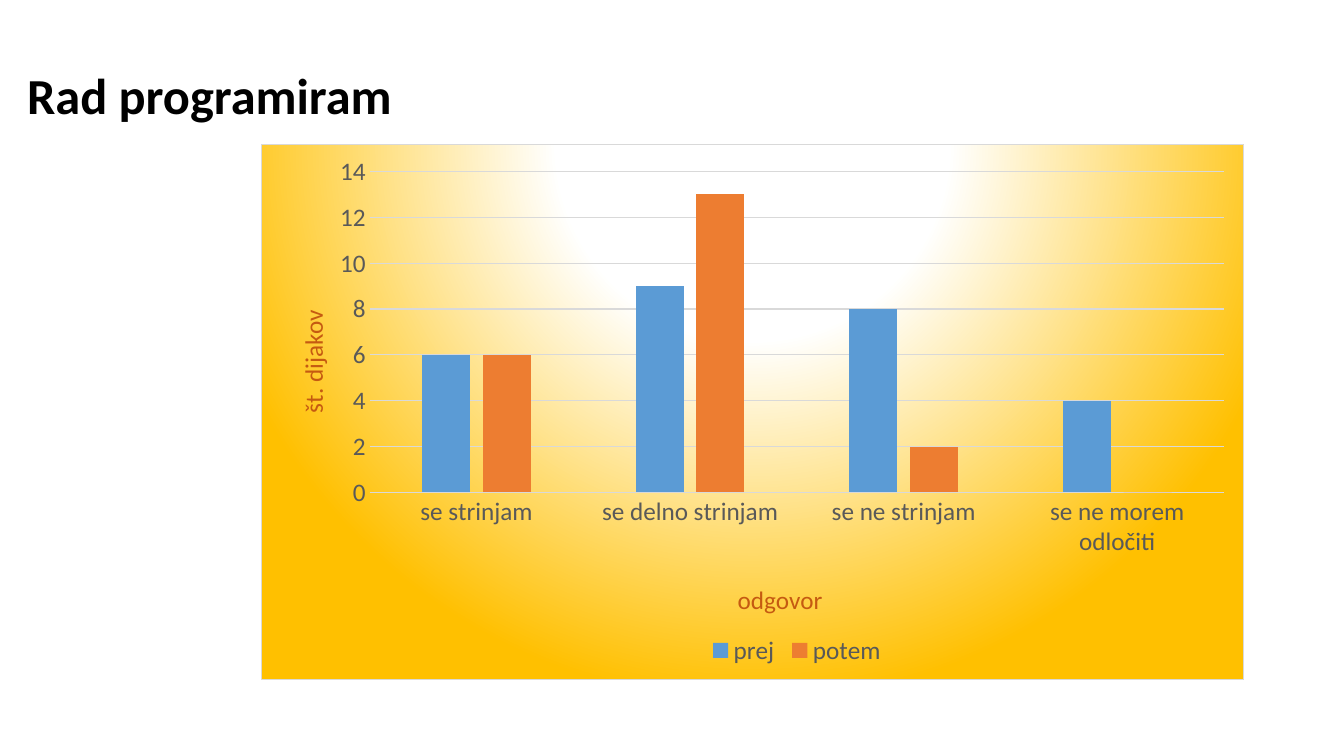
from lxml import etree
from pptx import Presentation
from pptx.chart.data import CategoryChartData
from pptx.dml.color import RGBColor
from pptx.enum import chart as kinds, text
from pptx.oxml import ns
from pptx.util import Inches, Pt

BLACK = RGBColor(0x00, 0x00, 0x00)
GREY = RGBColor(0x59, 0x59, 0x59)
PALE = RGBColor(0xD9, 0xD9, 0xD9)
RUST = RGBColor(0xC5, 0x5A, 0x11)
BLUE = RGBColor(0x5B, 0x9B, 0xD5)
ORANGE = RGBColor(0xED, 0x7D, 0x31)
FACE = "Calibri"

CATS = ["se strinjam", "se delno strinjam", "se ne strinjam", "se ne morem odločiti"]
SERIES = [("prej", [6, 9, 8, 4], BLUE), ("potem", [6, 13, 2, 0], ORANGE)]

GLOW = """<c:spPr xmlns:c="http://schemas.openxmlformats.org/drawingml/2006/chart"
 xmlns:a="http://schemas.openxmlformats.org/drawingml/2006/main">
<a:gradFill><a:gsLst>
<a:gs pos="0"><a:srgbClr val="FFFFFF"/></a:gs>
<a:gs pos="35000"><a:srgbClr val="FFFFFF"/></a:gs>
<a:gs pos="100000"><a:srgbClr val="FFC000"/></a:gs>
</a:gsLst><a:path path="circle">
<a:fillToRect l="50000" t="-80000" r="50000" b="180000"/></a:path></a:gradFill>
<a:ln w="9525"><a:solidFill><a:srgbClr val="D9D9D9"/></a:solidFill></a:ln>
</c:spPr>"""


def style(font, size, color, bold=False):
    """Set the face, size, weight and colour of a font."""
    for key, val in {"name": FACE, "size": Pt(size), "bold": bold}.items():
        setattr(font, key, val)
    font.color.rgb = color


def rule(line):
    """Draw a thin pale line."""
    line.color.rgb = PALE
    line.width = Pt(0.75)


def place(node, **spots):
    """Give a chart part a fixed place as shares of the chart."""
    for old in node.findall(ns.qn("c:layout")):
        node.remove(old)
    layout = etree.Element(ns.qn("c:layout"))
    manual = etree.SubElement(layout, ns.qn("c:manualLayout"))
    if "inner" in spots:
        etree.SubElement(manual, ns.qn("c:layoutTarget")).set("val", spots.pop("inner"))
    for key in ("x", "y"):
        etree.SubElement(manual, ns.qn(f"c:{key}Mode")).set("val", "edge")
    for key, val in spots.items():
        etree.SubElement(manual, ns.qn(f"c:{key}")).set("val", str(val))
    over = node.find(ns.qn("c:overlay"))
    if over is None:
        node.insert(0, layout)
    else:
        over.addprevious(layout)


def set_axis(axis, words, turn, x, y):
    """Style an axis and its title."""
    axis.major_tick_mark = axis.minor_tick_mark = kinds.XL_TICK_MARK.NONE
    style(axis.tick_labels.font, 18, GREY)
    title = axis.axis_title
    para = title.text_frame.paragraphs[0]
    run = para.add_run()
    run.text = words
    style(run.font, 18, RUST)
    body = title._element.find(".//" + ns.qn("a:bodyPr"))
    body.set("rot", str(turn * 60000))
    body.set("vert", "horz")
    place(title._element, x=x, y=y)


def add_title(slide, words):
    """Add the slide heading."""
    box = slide.shapes.add_textbox(Inches(0.17), Inches(0.17), Inches(12.99), Inches(1.12))
    frame = box.text_frame
    frame.word_wrap = True
    frame.vertical_anchor = text.MSO_ANCHOR.BOTTOM
    para = frame.paragraphs[0]
    para.line_spacing = 0.9
    run = para.add_run()
    run.text = words
    style(run.font, 36, BLACK, True)


def add_bars(slide):
    """Add the column chart of answers."""
    data = CategoryChartData()
    data.categories = CATS
    for name, vals, _ in SERIES:
        data.add_series(name, vals)
    chart = slide.shapes.add_chart(
        kinds.XL_CHART_TYPE.COLUMN_CLUSTERED,
        Inches(2.59), Inches(1.43), Inches(9.75), Inches(5.32), data).chart
    style(chart.font, 10, BLACK)
    chart.has_title = False

    plot = chart.plots[0]
    for key, val in {"gap_width": 219, "overlap": -27, "vary_by_categories": False}.items():
        setattr(plot, key, val)
    for bars, (_, _, color) in zip(plot.series, SERIES):
        bars.format.fill.solid()
        bars.format.fill.fore_color.rgb = color

    cat, val = chart.category_axis, chart.value_axis
    set_axis(cat, "odgovor", 0, 0.48, 0.81)
    set_axis(val, "št. dijakov", -90, 0.03, 0.3)
    rule(cat.format.line)
    rule(val.major_gridlines.format.line)
    val.format.line.fill.background()
    for key, num in {"minimum_scale": 0, "maximum_scale": 14, "major_unit": 2}.items():
        setattr(val, key, num)

    chart.has_legend = True
    legend = chart.legend
    legend.position = kinds.XL_LEGEND_POSITION.BOTTOM
    legend.include_in_layout = False
    style(legend.font, 18, GREY)
    place(legend._element, x=0.45, y=0.91, w=0.19, h=0.07)

    root = chart.element.find(ns.qn("c:chart"))
    place(root.find(ns.qn("c:plotArea")), inner="inner", x=0.11, y=0.05, w=0.87, h=0.6)
    root.addnext(etree.fromstring(GLOW))


def main():
    """Build and save the slide."""
    deck = Presentation()
    deck.slide_width, deck.slide_height = Inches(13.33), Inches(7.5)
    slide = deck.slides.add_slide(deck.slide_layouts[6])
    add_title(slide, "Rad programiram")
    add_bars(slide)
    deck.save("out.pptx")


if __name__ == "__main__":
    main()
